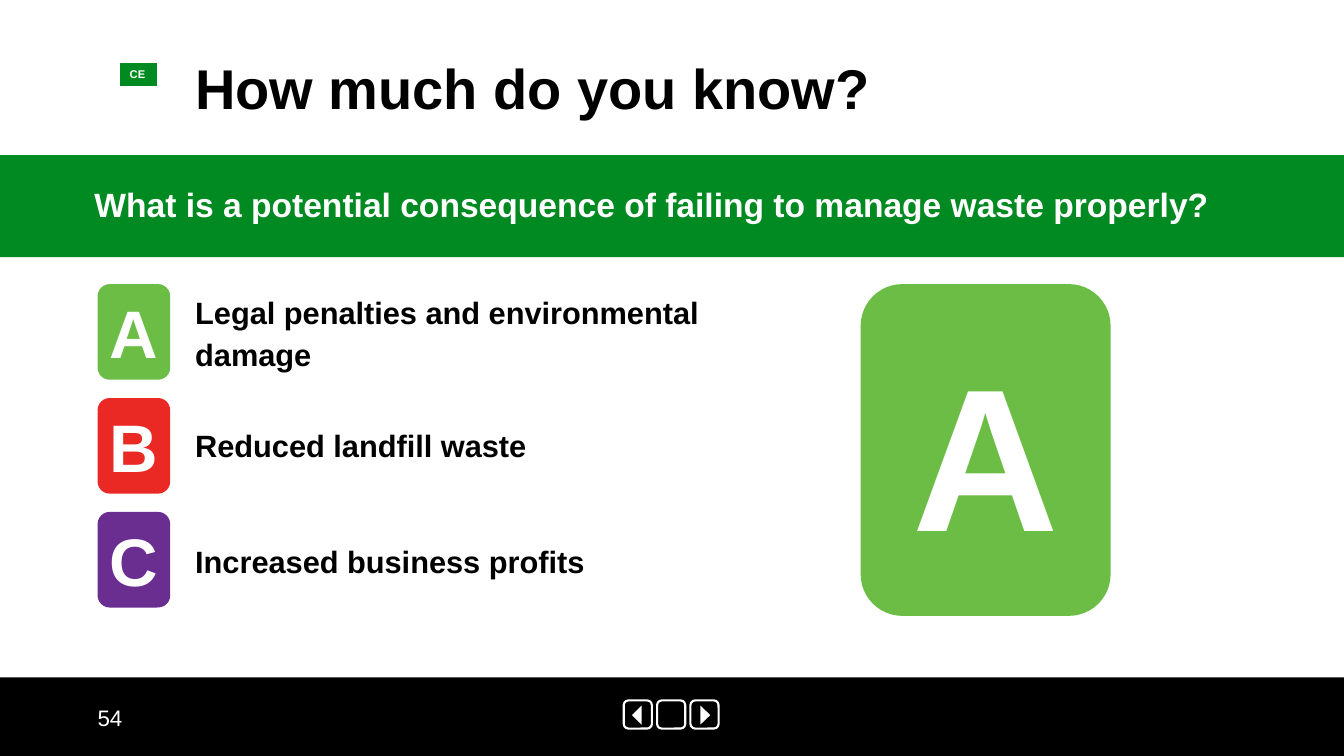
from pptx import Presentation
from pptx import util as u
from pptx.dml.color import RGBColor
from pptx.enum import shapes, text
from pptx.util import Cm

WHITE = RGBColor(0xFF, 0xFF, 0xFF)
BLACK = RGBColor(0, 0, 0)
DARK_GREEN = RGBColor(0x00, 0x8A, 0x21)
GREEN = RGBColor(0x6C, 0xBD, 0x45)
RED = RGBColor(0xEA, 0x29, 0x25)
PURPLE = RGBColor(0x6A, 0x2E, 0x91)

RECT = shapes.MSO_SHAPE.RECTANGLE
ROUNDED = shapes.MSO_SHAPE.ROUNDED_RECTANGLE
TOP, MIDDLE = text.MSO_ANCHOR.TOP, text.MSO_ANCHOR.MIDDLE
LEFT, CENTER = text.PP_ALIGN.LEFT, text.PP_ALIGN.CENTER

WIDTH, HEIGHT = 33.87, 19.05


class QuizSlide:
    font = "Arial"

    def __init__(self, prs):
        self.s = prs.slides.add_slide(prs.slide_layouts[5])

    def set_text(self, sp, words, size, color=BLACK, bold=True, align=LEFT,
                 anchor=TOP, spacing=None):
        tf = sp.text_frame
        tf.text = words
        tf.word_wrap = True
        tf.auto_size = text.MSO_AUTO_SIZE.NONE
        tf.vertical_anchor = anchor
        p = tf.paragraphs[0]
        p.alignment = align
        p.line_spacing = spacing
        f = p.runs[0].font
        f.name, f.size, f.bold = self.font, u.Pt(size), bold
        f.color.rgb = color

    def title(self, words, x, y, w, h):
        sp = self.s.shapes.title
        sp.left, sp.top, sp.width, sp.height = Cm(x), Cm(y), Cm(w), Cm(h)
        self.set_text(sp, words, 40, anchor=MIDDLE, spacing=0.9)

    def label(self, words, x, y, w, h, size, parent=None, **style):
        sp = (parent or self.s).shapes.add_textbox(Cm(x), Cm(y), Cm(w), Cm(h))
        self.set_text(sp, words, size, **style)

    def paint(self, sp, fill, line=None, line_width=0.75):
        sp.shadow.inherit = False
        sp.fill.solid()
        sp.fill.fore_color.rgb = fill
        if line is None:
            sp.line.fill.background()
        else:
            sp.line.color.rgb = line
            sp.line.width = u.Pt(line_width)
        return sp

    def box(self, kind, x, y, w, h, fill, parent=None, **line):
        sp = (parent or self.s).shapes.add_shape(kind, Cm(x), Cm(y), Cm(w), Cm(h))
        return self.paint(sp, fill, **line)

    def arrow(self, base, tip, y, h, parent):
        """Triangle with a vertical base, pointing sideways to its tip."""
        fb = parent.shapes.build_freeform(Cm(base), Cm(y))
        fb.add_line_segments([(Cm(tip), Cm(y + h / 2)), (Cm(base), Cm(y + h))])
        self.paint(fb.convert_to_shape(), WHITE)

    def button(self, x, arrow=None):
        """Navigation button; arrow gives the base and tip offsets from x."""
        g = self.s.shapes.add_group_shape() if arrow else None
        self.box(ROUNDED, x, 17.65, 0.71, 0.71, BLACK, g, line=WHITE, line_width=1.5)
        if arrow:
            self.arrow(x + arrow[0], x + arrow[1], 17.78, 0.48, g)

    def tile(self, letter, x, y, w, h, fill, size, drop, text_height):
        """Coloured card whose letter sits in a box dropped below its top."""
        g = self.s.shapes.add_group_shape()
        self.box(ROUNDED, x, y, w, h, fill, g)
        self.label(letter, x, y + drop, w, text_height, size, g, color=WHITE,
                   align=CENTER, anchor=MIDDLE, spacing=0.9)


def main():
    prs = Presentation()
    prs.slide_width, prs.slide_height = Cm(WIDTH), Cm(HEIGHT)
    quiz = QuizSlide(prs)

    quiz.box(RECT, 0, 17.07, WIDTH, HEIGHT - 17.07, BLACK)
    for i, arrow in enumerate([(0.45, 0.21), None, (0.25, 0.5)]):
        quiz.button(15.72 + 0.84 * i, arrow)
    quiz.label("54", 2.21, 17.63, 7.62, 1.02, 16, color=WHITE, bold=False)

    quiz.title("How much do you know?", 4.67, 1.02, 26.87, 2.57)
    quiz.box(RECT, 0, 3.91, WIDTH, 2.57, DARK_GREEN)
    quiz.label("What is a potential consequence of failing to manage waste properly?",
               2.13, 4.52, 30.15, 1.27, 24, color=WHITE)
    badge = quiz.box(RECT, 3.02, 1.57, 0.94, 0.61, DARK_GREEN, line=WHITE)
    quiz.set_text(badge, "CE", 8, WHITE)

    answers = [
        ("A", GREEN, "Legal penalties and environmental damage", 7.14, u.Pt(30)),
        ("B", RED, "Reduced landfill waste", 10.64, None),
        ("C", PURPLE, "Increased business profits", 13.54, None),
    ]
    for i, (letter, color, answer, y, spacing) in enumerate(answers):
        quiz.label(answer, 4.67, y, 14.63, 1.2, 22, spacing=spacing)
        quiz.tile(letter, 2.46, 7.16 + 2.87 * i, 1.83, 2.41, color, 48, 0.34, 1.98)
    quiz.tile("A", 21.69, 7.16, 6.3, 8.36, GREEN, 145, 1.17, 6.81)

    prs.save("out.pptx")


if __name__ == "__main__":
    main()
